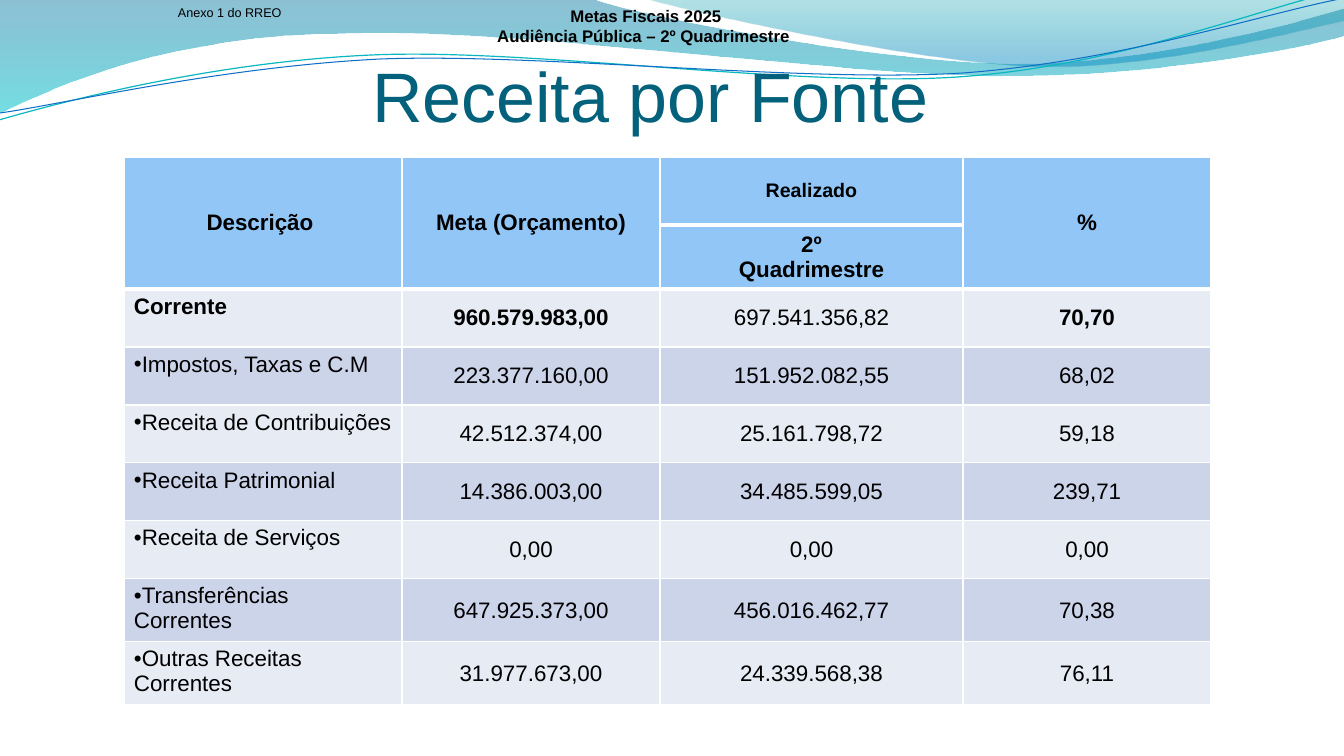
from lxml.etree import SubElement
from pptx import Presentation
from pptx.dml.color import RGBColor
from pptx.enum.text import MSO_ANCHOR, PP_ALIGN
from pptx.oxml.ns import qn
from pptx.util import Emu, Pt


def px(n):
    return Emu(round(n * 12192000 / 1344))


def write(frame, lines, size, bold=False, align=PP_ALIGN.LEFT, color="000000", bullet=False):
    frame.word_wrap = True
    for i, line in enumerate(lines):
        para = frame.add_paragraph() if i else frame.paragraphs[0]
        para.alignment = align
        if bullet:
            props = para._p.get_or_add_pPr()
            SubElement(props, qn("a:buFont"), typeface="Arial")
            SubElement(props, qn("a:buChar"), char="•")
        run = para.add_run()
        run.text = line
        run.font.name = "Arial"
        run.font.size = Pt(size)
        run.font.bold = bold
        run.font.color.rgb = RGBColor.from_string(color)


deck = Presentation()
deck.slide_width, deck.slide_height = px(1344), px(756)
slide = deck.slides.add_slide(deck.slide_layouts[5])
shapes = slide.shapes

waves = [
    ([[(0, -1)],
      [(592, -1), (639, 17), (892, 64), (1019, 64), (1146, 64), (1288, 26), (1344, 9)],
      [(1346, 36), (1321, 44), (1169, 77), (1002, 76), (836, 76), (513, 28), (346, 34),
       (173, 35), (61, 84), (-1, 114)]],
     [(0, "0074A0", 45), (1, "00C4CD", 55)], 270),
    ([[(644, -1), (684, 11), (916, 62), (1033, 66), (1150, 70), (1292, 32), (1344, 21)],
      [(1344, 0)]],
     [(0.2, "008ABF", 45), (1, "00A0A8", 30)], 90),
]
strands = [
    ([[(-1, 120), (65, 101), (213, 62), (372, 55), (531, 48), (795, 88), (958, 77),
       (1119, 66), (1261, 8), (1342, -10)]], "09B7BF", 0.85),
    ([[(0, 113), (64, 104), (220, 67), (381, 59), (541, 53), (802, 83), (963, 73),
       (1124, 61), (1265, 13), (1345, -2)]], "0F6FC6", 0.75),
]
for chains, paint, extra in waves + strands:
    dots = [(px(x), px(y)) for chain in chains for x, y in chain]
    wave = isinstance(paint, list)
    pen = shapes.build_freeform(*dots[0])
    pen.add_line_segments(dots[1:], close=wave)
    shape = pen.convert_to_shape()
    steps = shape._element.spPr.findall(".//" + qn("a:lnTo"))
    spot = -1
    for chain in chains:
        for k in range(spot + 1, spot + len(chain), 3):
            curve = SubElement(steps[k].getparent(), qn("a:cubicBezTo"))
            steps[k].addprevious(curve)
            for step in steps[k:k + 3]:
                curve.append(step[0])
                step.getparent().remove(step)
        spot += len(chain)
    shape.shadow.inherit = False
    if wave:
        shape.line.fill.background()
        shape.fill.gradient()
        shape.fill.gradient_angle = extra
        for stop, (place, color, _) in zip(shape.fill.gradient_stops, paint):
            stop.position = place
            stop.color.rgb = RGBColor.from_string(color)
        tints = shape._element.spPr.findall(".//" + qn("a:srgbClr"))
        for tint, (_, _, alpha) in zip(tints, paint):
            SubElement(tint, qn("a:alpha"), val=str(alpha * 1000))
    else:
        shape.fill.background()
        shape.line.color.rgb = RGBColor.from_string(paint)
        shape.line.width = Pt(extra)

title = shapes.title
shapes._spTree.append(title._element)
title.left, title.top, title.width, title.height = px(208), px(55), px(907), px(104)
frame = title.text_frame
frame.vertical_anchor = MSO_ANCHOR.MIDDLE
frame.margin_left, frame.margin_top = 0, px(5)
frame.margin_right, frame.margin_bottom = px(22), px(30)
write(frame, ["Receita por Fonte"], 50, align=PP_ALIGN.CENTER, color="04617B")

rows = [
    ["Descrição ", "Meta (Orçamento)", "Realizado", "%"],
    ["", "", "2º\nQuadrimestre", ""],
    ["Corrente", "960.579.983,00", "697.541.356,82", "70,70"],
    ["Impostos, Taxas e C.M", "223.377.160,00", "151.952.082,55", "68,02"],
    ["Receita de Contribuições", "42.512.374,00", "25.161.798,72", "59,18"],
    ["Receita Patrimonial", "14.386.003,00", "34.485.599,05", "239,71"],
    ["Receita de Serviços", "0,00", "0,00", "0,00"],
    ["Transferências Correntes", "647.925.373,00", "456.016.462,77", "70,38"],
    ["Outras Receitas Correntes", "31.977.673,00", "24.339.568,38", "76,11"],
]
wide = [278, 258, 303, 248]
high = [68, 64, 58, 58, 58, 58, 58, 63, 63]
table = shapes.add_table(9, 4, px(124), px(157), px(sum(wide)), px(sum(high))).table
table.first_row = table.horz_banding = False
for col, n in zip(table.columns, wide):
    col.width = px(n)
for row, n in zip(table.rows, high):
    row.height = px(n)
for c in (0, 1, 3):
    table.cell(0, c).merge(table.cell(1, c))

for r, row in enumerate(rows):
    for c, text in enumerate(row):
        cell = table.cell(r, c)
        if cell.is_spanned:
            continue
        head = r < 2
        props = cell._tc.get_or_add_tcPr()
        for side in "LRTB":
            thick = side == "B" and head or side == "T" and r in (1, 2)
            edge = SubElement(props, qn("a:ln" + side), w=str(Pt(3 if thick else 0.96)))
            fill = SubElement(edge, qn("a:solidFill"))
            SubElement(fill, qn("a:srgbClr"), val="FFFFFF")
        cell.fill.solid()
        tone = "91C6F7" if head else "CCD4EA" if r % 2 else "E7EBF4"
        cell.fill.fore_color.rgb = RGBColor.from_string(tone)
        cell.margin_left = cell.margin_right = px(1 if c == 3 and not head else 10)
        cell.margin_top = cell.margin_bottom = px(5)
        label = c == 0 and not head
        cell.vertical_anchor = MSO_ANCHOR.TOP if label else MSO_ANCHOR.MIDDLE
        write(cell.text_frame, text.split("\n"), 14 if (r, c) == (0, 2) else 16,
              head or r == 2 and c != 2, PP_ALIGN.LEFT if label else PP_ALIGN.CENTER,
              bullet=label and r > 2)

note = shapes.add_textbox(px(168), 0, px(137), px(25)).text_frame
write(note, ["Anexo 1 do RREO"], 9)
event = shapes.add_textbox(px(475), px(1), px(342), px(50)).text_frame
event.vertical_anchor = MSO_ANCHOR.MIDDLE
write(event, ["Metas Fiscais 2025", "Audiência Pública – 2º Quadrimestre "], 12, True, PP_ALIGN.CENTER)

deck.save("out.pptx")
